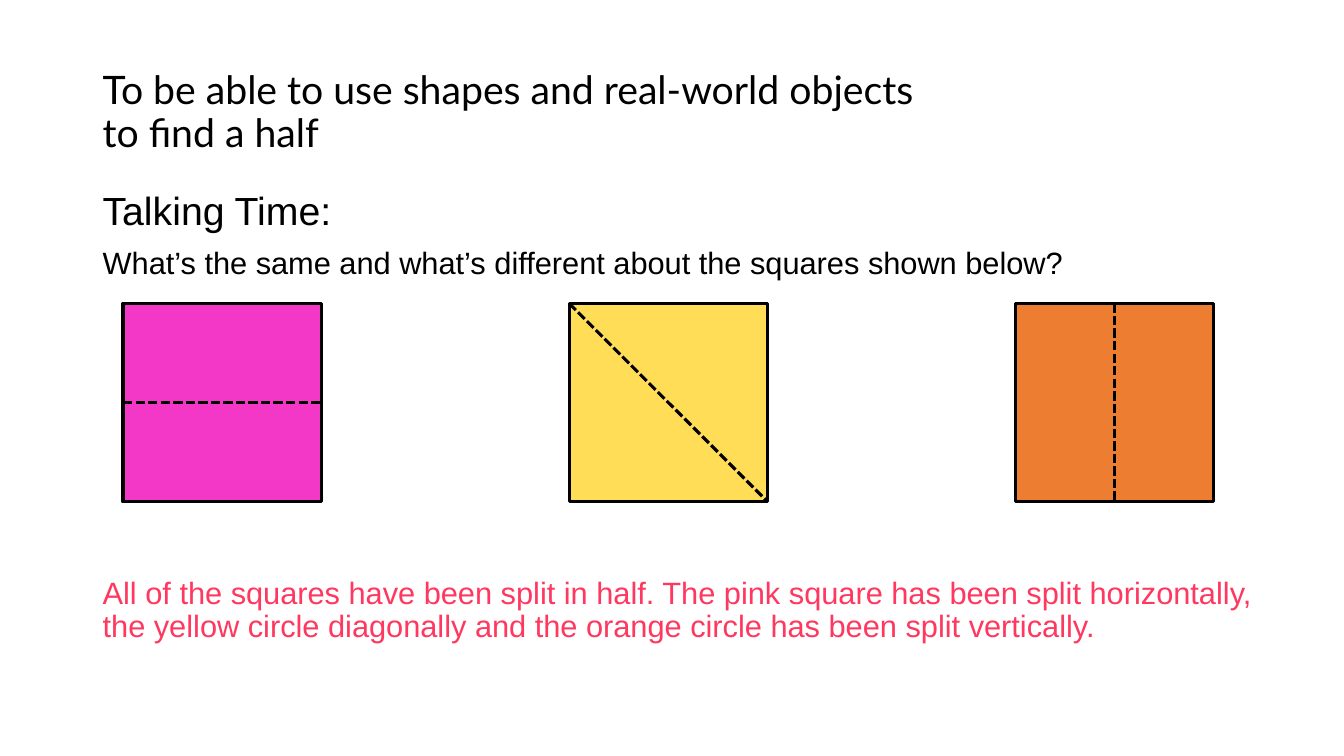
"""Build a slide that compares three squares split in half."""
from dataclasses import dataclass

from lxml import etree
from pptx import Presentation
from pptx.dml.color import RGBColor
from pptx.enum.dml import MSO_LINE
from pptx.enum.shapes import MSO_CONNECTOR, MSO_SHAPE
from pptx.enum.text import MSO_ANCHOR
from pptx.oxml.ns import qn
from pptx.slide import Slide
from pptx.util import Inches, Pt

RECTANGLE = MSO_SHAPE.RECTANGLE
STRAIGHT = MSO_CONNECTOR.STRAIGHT
DASH = MSO_LINE.SQUARE_DOT
TOP, MIDDLE = MSO_ANCHOR.TOP, MSO_ANCHOR.MIDDLE

BLACK = "000000"
SIDE = 1.97
SQUARE_TOP = 3.01
FIRST_LEFT, LAST_LEFT = 1.22, 10.07
OUTLINE = 2.25


@dataclass
class Line:
    text: str
    size: int
    font: str = "Arial"
    color: str = BLACK
    before: int = 0


@dataclass
class TextBlock:
    left: float
    top: float
    width: float
    height: float
    anchor: MSO_ANCHOR
    lines: list[Line]


@dataclass
class Square:
    color: str
    cut_start: tuple[float, float]
    cut_end: tuple[float, float]


BLOCKS = [
    TextBlock(0.92, 0.4, 9.6, 1.45, MIDDLE, [
        Line("To be able to use shapes and real-world objects\vto find a half", 28, "Lato"),
    ]),
    TextBlock(0.92, 1.85, 12.1, 4.76, TOP, [
        Line("Talking Time:", 28),
        Line("What’s the same and what’s different about the squares shown below?", 22, before=10),
        Line("All of the squares have been split in half. The pink square has been split "
             "horizontally, the yellow circle diagonally and the orange circle has been "
             "split vertically.", 22, color="FF3860", before=212),
    ]),
]

SQUARES = [
    Square("F337C7", (0, 0.5), (1, 0.5)),
    Square("FFDD57", (0, 0), (1, 1)),
    Square("ED7D31", (0.5, 0), (0.5, 1)),
]


def rgb(color: str) -> RGBColor:
    return RGBColor.from_string(color)


def add_text(page: Slide, block: TextBlock) -> None:
    box = page.shapes.add_textbox(
        Inches(block.left), Inches(block.top), Inches(block.width), Inches(block.height))
    frame = box.text_frame
    frame.word_wrap = True
    frame.vertical_anchor = block.anchor
    for index, line in enumerate(block.lines):
        para = frame.add_paragraph() if index else frame.paragraphs[0]
        para.text = line.text
        layout = {"line_spacing": 0.9, "space_before": Pt(line.before)}
        for name, value in layout.items():
            setattr(para, name, value)
        for span in para.runs:
            for name, value in {"name": line.font, "size": Pt(line.size)}.items():
                setattr(span.font, name, value)
            span.font.color.rgb = rgb(line.color)


def add_square(page: Slide, square: Square, left: float) -> None:
    shape = page.shapes.add_shape(
        RECTANGLE, Inches(left), Inches(SQUARE_TOP), Inches(SIDE), Inches(SIDE))
    shape.shadow.inherit = False
    shape.fill.solid()
    shape.fill.fore_color.rgb = rgb(square.color)
    shape.line.color.rgb = rgb(BLACK)
    shape.line.width = Pt(OUTLINE)


def add_cut(page: Slide, square: Square, left: float) -> None:
    ends = [
        Inches(origin + SIDE * part)
        for point in (square.cut_start, square.cut_end)
        for origin, part in zip((left, SQUARE_TOP), point)
    ]
    cut = page.shapes.add_connector(STRAIGHT, *ends)
    cut.line.color.rgb = rgb(BLACK)
    for name, value in {"width": Pt(OUTLINE), "dash_style": DASH}.items():
        setattr(cut.line, name, value)
    etree.SubElement(cut.element.spPr, qn("a:effectLst"))


def main() -> None:
    deck = Presentation()
    deck.slide_width, deck.slide_height = Inches(13.33), Inches(7.5)
    page = deck.slides.add_slide(deck.slide_layouts[6])
    for block in BLOCKS:
        add_text(page, block)
    step = (LAST_LEFT - FIRST_LEFT) / (len(SQUARES) - 1)
    for draw in (add_square, add_cut):
        for index, square in enumerate(SQUARES):
            draw(page, square, FIRST_LEFT + index * step)
    deck.save("out.pptx")


if __name__ == "__main__":
    main()
